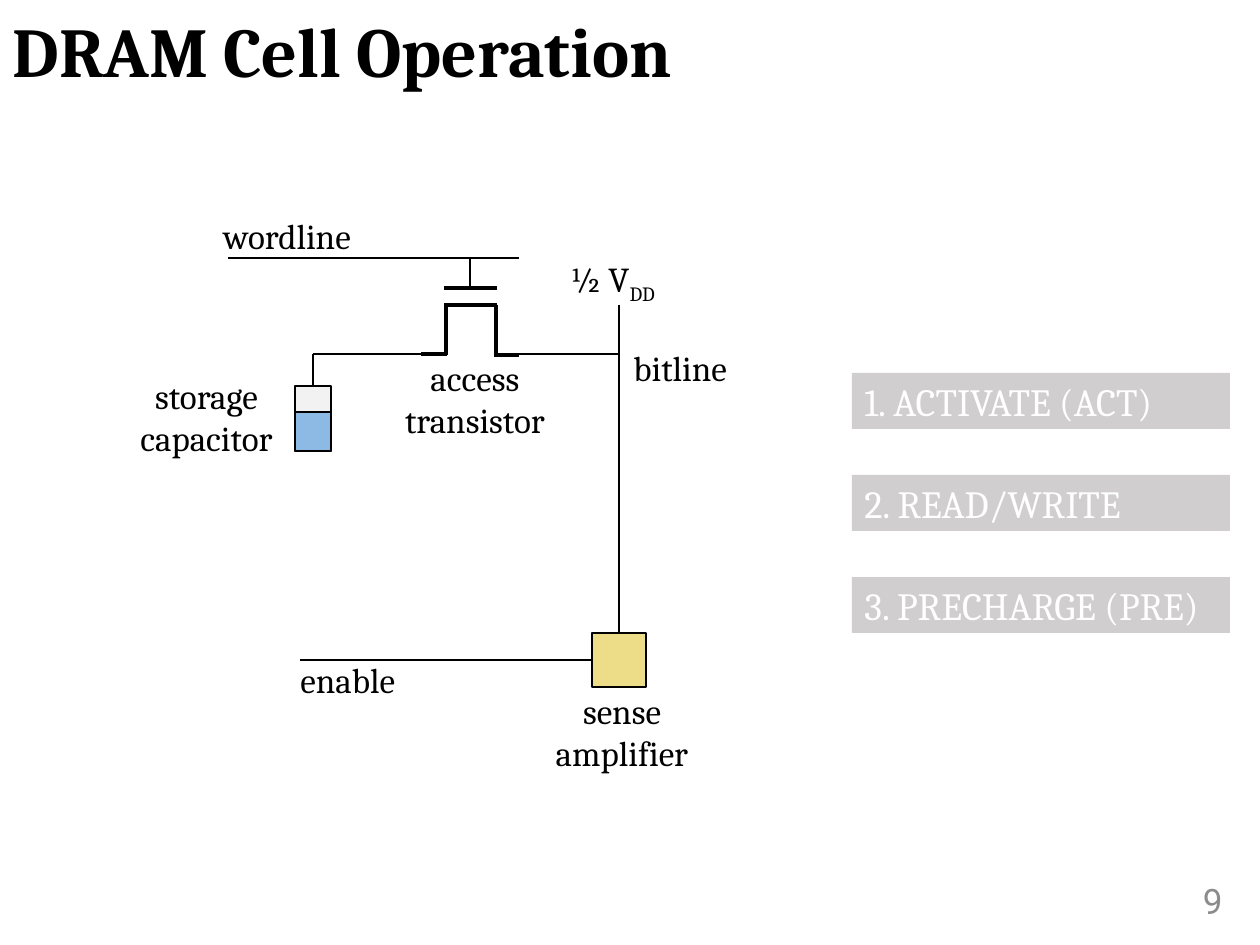
"""Build the DRAM cell operation slide."""
from dataclasses import dataclass

from lxml.etree import SubElement
from pptx import Presentation
from pptx.dml.color import RGBColor
from pptx.enum.shapes import MSO_CONNECTOR, MSO_SHAPE
from pptx.enum.text import MSO_ANCHOR, MSO_AUTO_SIZE, PP_ALIGN
from pptx.oxml.ns import qn
from pptx.util import Pt


@dataclass(frozen=True)
class Theme:
    font: str = "Cambria"
    number_font: str = "Roboto"
    ink: str = "000000"
    muted: str = "8C8C8C"
    white: str = "FFFFFF"
    step: str = "D0CECE"
    empty: str = "F2F2F2"
    charge: str = "8DBAE4"
    amplifier: str = "EEDD88"
    title_size: int = 40
    step_size: int = 22
    label_size: int = 20
    wire: float = 1.5
    thick: float = 2.25


T = Theme()
LEFT, CENTER, RIGHT = PP_ALIGN.LEFT, PP_ALIGN.CENTER, PP_ALIGN.RIGHT

TITLE = "DRAM Cell Operation"
PAGE = "9"
STEPS = ["1. ACTIVATE (ACT)", "2. READ/WRITE", "3. PRECHARGE (PRE)"]
STEP_BOX = (852, 373, 378, 56)
STEP_PITCH = 102

PARTS = {
    "capacitor": ((295, 386, 36, 65), T.empty),
    "charge": ((295, 412, 36, 39), T.charge),
    "amplifier": ((592, 633, 54, 54), T.amplifier),
}
WIRES = [
    (228, 258, 519, 258),
    (470, 287, 470, 258),
    (313, 354, 433, 354),
    (496, 354, 619, 354),
]
JOINED_WIRES = [
    (619, 305, 619, 633, "amplifier", 0),
    (300, 660, 592, 660, "amplifier", 1),
    (313, 354, 313, 386, "capacitor", 0),
]
TRANSISTOR = [
    (421, 354, 447, 354),
    (446, 355, 446, 305),
    (444, 288, 497, 288),
    (496, 355, 496, 305),
    (444, 305, 497, 305),
    (494, 355, 519, 355),
]
LABELS = [
    (["wordline"], (211, 208, 163, 55), LEFT, False),
    (["bitline"], (621, 340, 122, 55), LEFT, False),
    (["sense", "amplifier"], (487, 683, 270, 97), CENTER, True),
    (["enable"], (288, 652, 126, 55), LEFT, False),
    (["storage", "capacitor"], (124, 368, 165, 97), CENTER, False),
    (["access", "transistor"], (387, 350, 176, 97), CENTER, False),
]
SUPPLY = ("½ V", "DD")
SUPPLY_BOX = (558, 251, 122, 55)


def px(n):
    return round(n * 914400 / 126)


def emu(values):
    return [px(v) for v in values]


def add_run(p, text, size, color=T.ink, font=T.font, bold=False):
    r = p.add_run()
    r.text = text
    r.font.name, r.font.size, r.font.bold = font, Pt(size), bold
    r.font.color.rgb = RGBColor.from_string(color)
    return r


def add_text(s, box, wrap):
    tf = s.shapes.add_textbox(*emu(box)).text_frame
    tf.word_wrap = wrap
    return tf


def add_label(s, lines, box, align, wrap):
    tf = add_text(s, box, wrap)
    for i, line in enumerate(lines):
        p = tf.add_paragraph() if i else tf.paragraphs[0]
        p.alignment = align
        add_run(p, line, T.label_size)


def add_rect(s, box, fill, outlined=True):
    sp = s.shapes.add_shape(MSO_SHAPE.RECTANGLE, *emu(box))
    sp.shadow.inherit = False
    sp.fill.solid()
    sp.fill.fore_color.rgb = RGBColor.from_string(fill)
    if outlined:
        sp.line.color.rgb = RGBColor.from_string(T.ink)
        sp.line.width = Pt(T.wire)
    else:
        sp.line.fill.background()
    return sp


def add_line(shapes, ends, width):
    line = shapes.add_connector(MSO_CONNECTOR.STRAIGHT, *emu(ends))
    line.line.color.rgb = RGBColor.from_string(T.ink)
    line.line.width = Pt(width)
    SubElement(line._element.spPr, qn("a:effectLst"))
    return line


def add_title(s):
    sp = s.shapes.title
    sp.left, sp.top, sp.width, sp.height = emu((0, 11, 1239, 102))
    tf = sp.text_frame
    tf.auto_size = MSO_AUTO_SIZE.NONE
    tf.vertical_anchor = MSO_ANCHOR.TOP
    p = tf.paragraphs[0]
    p.alignment, p.line_spacing = LEFT, 0.9
    add_run(p, TITLE, T.title_size, bold=True)


def add_circuit(s):
    parts = {name: add_rect(s, *part) for name, part in PARTS.items()}
    for ends in WIRES:
        add_line(s.shapes, ends, T.wire)
    for *ends, part, side in JOINED_WIRES:
        add_line(s.shapes, ends, T.wire).end_connect(parts[part], side)
    group = s.shapes.add_group_shape()
    for ends in TRANSISTOR:
        add_line(group.shapes, ends, T.thick)
    for label in LABELS:
        add_label(s, *label)
    p = add_text(s, SUPPLY_BOX, True).paragraphs[0]
    base, sub = (add_run(p, text, T.label_size) for text in SUPPLY)
    sub.font._element.set("baseline", "-25000")


def add_steps(s):
    x, y, w, h = STEP_BOX
    for i, step in enumerate(STEPS):
        sp = add_rect(s, (x, y + i * STEP_PITCH, w, h), T.step, outlined=False)
        tf = sp.text_frame
        tf.vertical_anchor = MSO_ANCHOR.MIDDLE
        p = tf.paragraphs[0]
        p.alignment = PP_ALIGN.JUSTIFY
        add_run(p, step, T.step_size, T.white)


def add_page_number(s):
    tf = add_text(s, (1099, 876, 136, 50), True)
    tf.vertical_anchor = MSO_ANCHOR.MIDDLE
    p = tf.paragraphs[0]
    p.alignment = RIGHT
    add_run(p, PAGE, T.label_size, T.muted, T.number_font)


def main():
    prs = Presentation()
    prs.slide_width, prs.slide_height = emu((1260, 945))
    s = prs.slides.add_slide(prs.slide_layouts[5])
    add_title(s)
    add_circuit(s)
    add_steps(s)
    add_page_number(s)
    prs.save("out.pptx")


if __name__ == "__main__":
    main()
